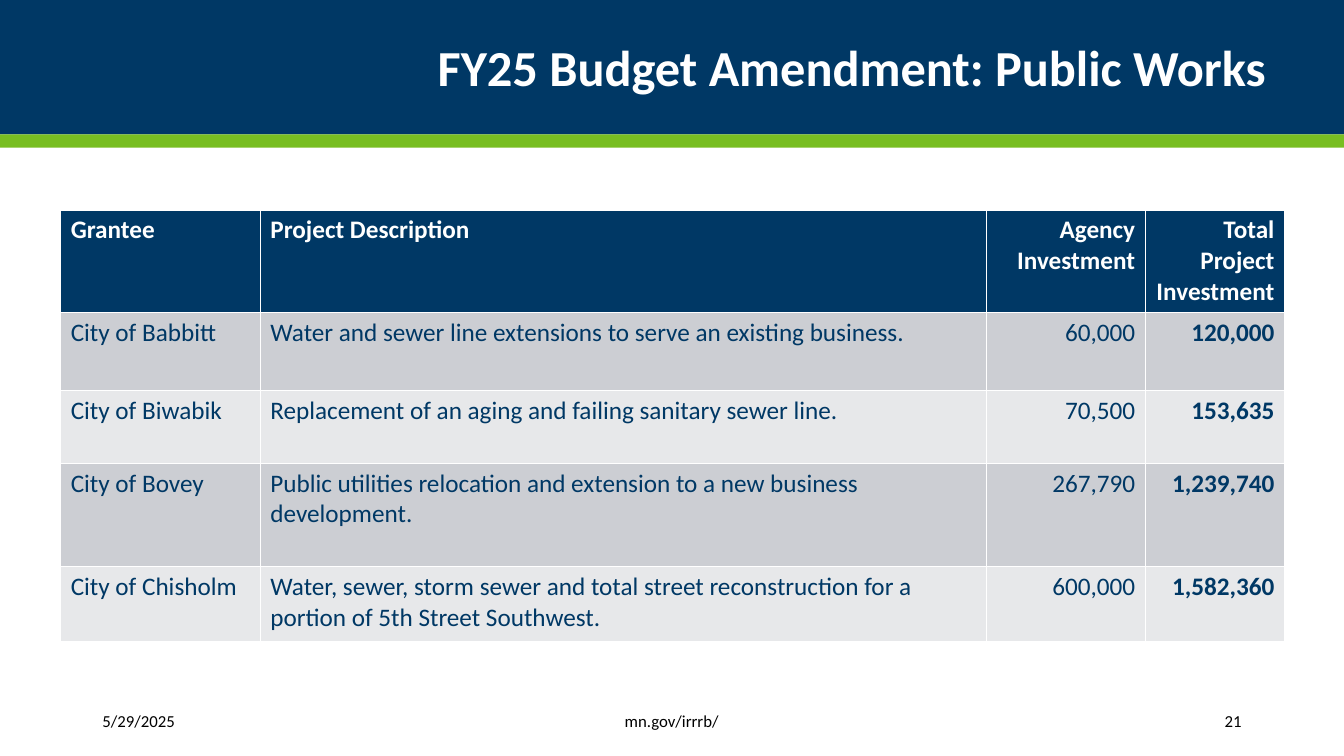
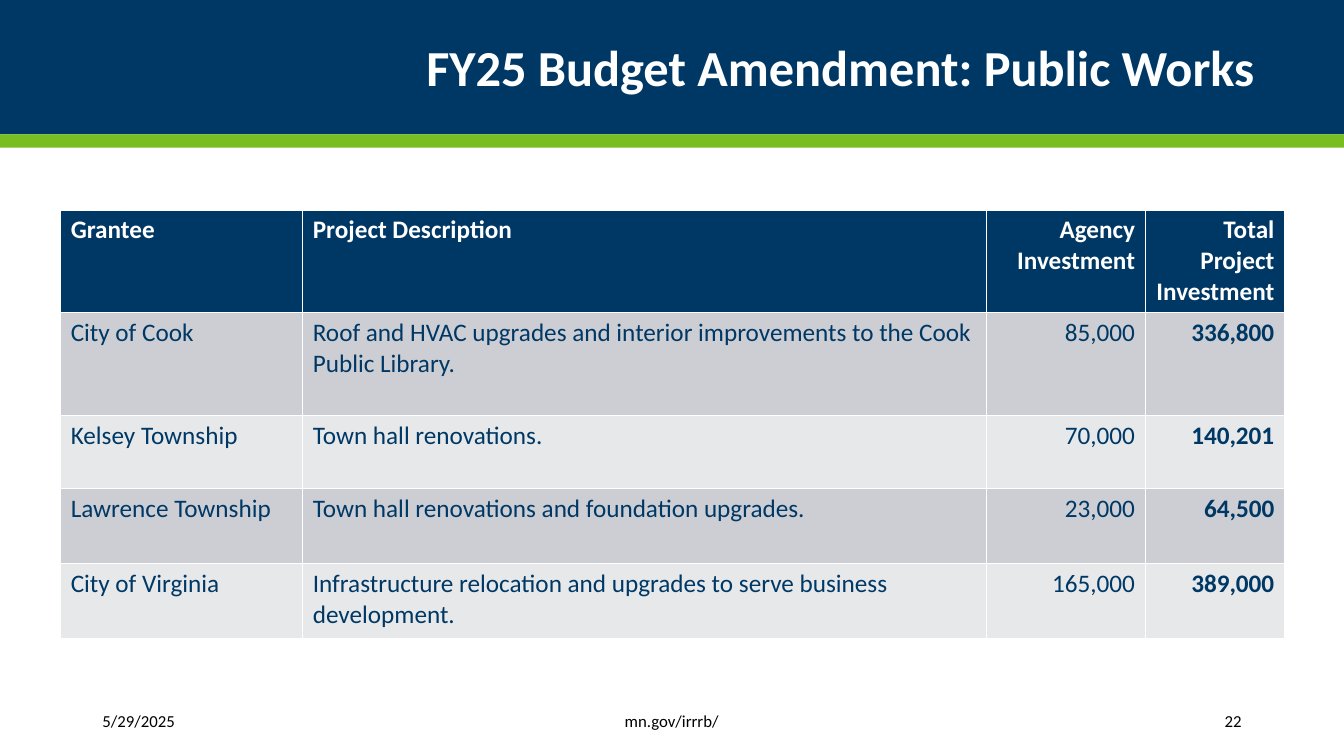
from pptx import Presentation
from pptx.dml.color import RGBColor
from pptx.enum.shapes import MSO_SHAPE as Shape
from pptx.enum.text import MSO_ANCHOR as Anchor, PP_ALIGN as Align
from pptx.util import Cm, Pt

NAVY, GREEN, WHITE, BLACK = "003865", "78BE21", "FFFFFF", "000000"
STRIPES = ["CCCED3", "E7E8EA"]
HEAD = ["Grantee", "Project Description", "Agency Investment",
        "Total Project Investment"]
FIRST = 21

# Title, column widths, row heights, table rows
PAGES = [
    ("FY25 Budget Amendment: Public Works",
     [5.03, 18.31, 3.99, 3.51], [2.59, 1.95, 1.84, 2.6, 1.9], [
         ["City of Babbitt",
          "Water and sewer line extensions to serve an existing business.",
          "60,000", "120,000"],
         ["City of Biwabik",
          "Replacement of an aging and failing sanitary sewer line.",
          "70,500", "153,635"],
         ["City of Bovey",
          "Public utilities relocation and extension to a new business "
          "development.",
          "267,790", "1,239,740"],
         ["City of Chisholm",
          "Water, sewer, storm sewer and total street reconstruction for a "
          "portion of 5th Street Southwest.",
          "600,000", "1,582,360"],
     ]),
    ("FY25 Budget Amendment: Public Works ",
     [6.1, 17.24, 3.99, 3.51], [2.59, 2.58, 1.84, 1.9, 1.9], [
         ["City of Cook",
          "Roof and HVAC upgrades and interior improvements to the Cook "
          "Public Library.",
          "85,000", "336,800"],
         ["Kelsey Township", "Town hall renovations.", "70,000", "140,201"],
         ["Lawrence Township",
          "Town hall renovations and foundation upgrades.",
          "23,000", "64,500"],
         ["City of Virginia",
          "Infrastructure relocation and upgrades to serve business "
          "development.",
          "165,000", "389,000"],
     ]),
]


def paint(fill, color):
    fill.solid()
    fill.fore_color.rgb = RGBColor.from_string(color)


def write(frame, text, size, color, align=Align.LEFT, bold=False):
    frame.text = text
    para = frame.paragraphs[0]
    para.alignment = align
    font = para.font
    font.name, font.size, font.bold = "Calibri", Pt(size), bold
    font.color.rgb = RGBColor.from_string(color)
    return para


deck = Presentation()
deck.slide_width, deck.slide_height = Cm(33.87), Cm(19.05)
layout = deck.slide_layouts[5]
slides = [deck.slides.add_slide(layout) for page in PAGES]

# Shared title place and bands, kept on the layout behind the title
name = layout.placeholders[0]
name.left, name.top, name.width, name.height = Cm(2.97), Cm(0.5), Cm(29.2), Cm(2.54)
for top, height, color in [(0, 3.39, NAVY), (3.39, 0.33, GREEN)]:
    band = slides[0].shapes.add_shape(
        Shape.RECTANGLE, 0, Cm(top), deck.slide_width, Cm(height))
    band.shadow.inherit = False
    paint(band.fill, color)
    band.line.fill.background()
    name.element.addprevious(band.element)

for number, (slide, page) in enumerate(zip(slides, PAGES), FIRST):
    title, widths, heights, rows = page
    frame = slide.shapes.title.text_frame
    frame.vertical_anchor = Anchor.MIDDLE
    write(frame, title, 36, WHITE, Align.RIGHT, True).line_spacing = 0.9

    for left, width, text, align in [
            (2.33, 3.79, "5/29/2025", Align.LEFT),
            (9.17, 15.52, "mn.gov/irrrb/", Align.CENTER),
            (27.48, 4.06, str(number), Align.RIGHT)]:
        box = slide.shapes.add_textbox(Cm(left), Cm(17.66), Cm(width), Cm(1.01))
        box.text_frame.word_wrap = True
        box.text_frame.vertical_anchor = Anchor.MIDDLE
        write(box.text_frame, text, 12, BLACK, align)

    table = slide.shapes.add_table(
        len(heights), len(widths), Cm(1.53), Cm(5.29),
        Cm(sum(widths)), Cm(sum(heights))).table
    for col, width in zip(table.columns, widths):
        col.width = Cm(width)
    for row, height in zip(table.rows, heights):
        row.height = Cm(height)
    for r, row in enumerate([HEAD] + rows):
        for c, text in enumerate(row):
            cell = table.cell(r, c)
            paint(cell.fill, STRIPES[(r - 1) % 2] if r else NAVY)
            write(cell.text_frame, text, 18, NAVY if r else WHITE,
                  Align.RIGHT if c > 1 else Align.LEFT, r == 0 or c == 3)

deck.save("out.pptx")
